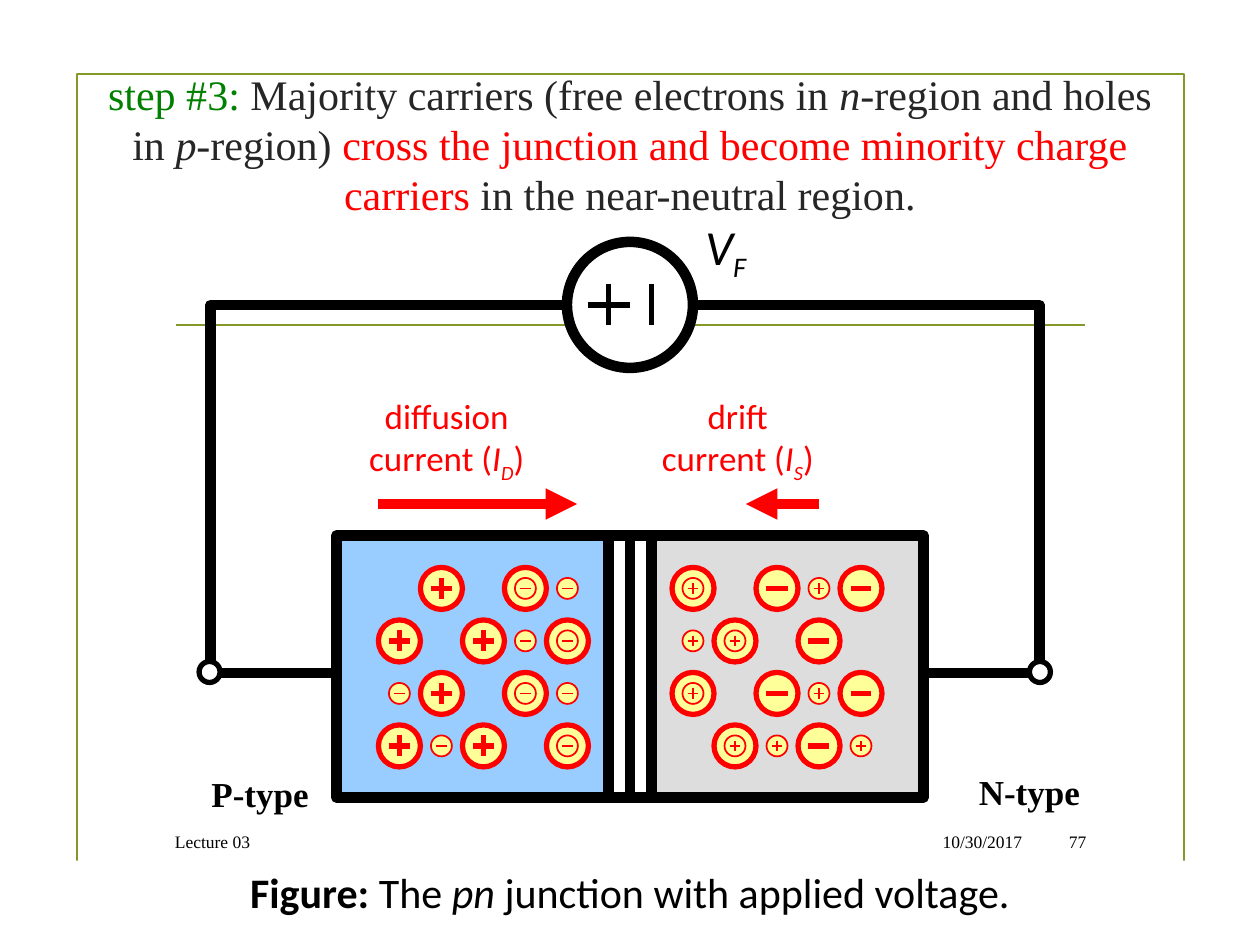
from lxml import etree
from pptx import Presentation
from pptx.dml.color import RGBColor
from pptx.enum.shapes import MSO_CONNECTOR, MSO_SHAPE
from pptx.enum.text import MSO_ANCHOR, PP_ALIGN
from pptx.oxml.ns import qn
from pptx.util import Inches, Pt

COLORS = {
    "black": "000000", "white": "FFFFFF", "red": "FF0000", "green": "008000",
    "title": "262626", "olive": "83992A", "p_side": "99CCFF",
    "n_side": "DDDDDD", "carrier": "FFFF99",
}
SERIF, SANS = "Times New Roman", "Calibri"
RECT, OVAL, LINE = MSO_SHAPE.RECTANGLE, MSO_SHAPE.OVAL, "line"


def write(paragraph, text, size=24, font=SERIF, color="black", bold=False,
          italic=False, baseline=None):
    """Append one formatted run; baseline is a percentage, negative for subscript."""
    run = paragraph.add_run()
    run.text = text
    run.font.size = Pt(size)
    run.font.name = font
    run.font.bold = bold
    run.font.italic = italic
    run.font.color.rgb = RGBColor.from_string(COLORS[color])
    if baseline:
        run.font._element.set("baseline", str(baseline * 1000))


def draw(parent, kind, left, top, width, height, color="black", weight=6,
         fill=None, arrow=False):
    """Add an outlined shape, or a line whose run is (width, height)."""
    if kind == LINE:
        item = parent.add_connector(MSO_CONNECTOR.STRAIGHT, Inches(left), Inches(top),
                                    Inches(left + width), Inches(top + height))
        etree.SubElement(item._element.spPr, qn("a:effectLst"))
    else:
        item = parent.add_shape(kind, Inches(left), Inches(top),
                                Inches(width), Inches(height))
        item.shadow.inherit = False
        if fill:
            item.fill.solid()
            item.fill.fore_color.rgb = RGBColor.from_string(COLORS[fill])
        else:
            item.fill.background()
    item.line.color.rgb = RGBColor.from_string(COLORS[color])
    item.line.width = Pt(weight)
    if arrow:
        etree.SubElement(item.line._get_or_add_ln(), qn("a:tailEnd"), type="triangle")
    return item


prs = Presentation()
prs.slide_width, prs.slide_height = Inches(10), Inches(7.5)
slide = prs.slides.add_slide(prs.slide_layouts[5])
shapes = slide.shapes

# Title
title = shapes.title
title.left, title.top = Inches(0.75), Inches(0.43)
title.width, title.height = Inches(8.5), Inches(1.42)
title.text_frame.vertical_anchor = MSO_ANCHOR.MIDDLE
title.text_frame.word_wrap = True
heading = title.text_frame.paragraphs[0]
heading.alignment = PP_ALIGN.CENTER
for text, color, italic in [
    ("step #3: ", "green", False),
    ("Majority carriers (free electrons in ", "title", False),
    ("n", "title", True),
    ("-region and holes in ", "title", False),
    ("p", "title", True),
    ("-region) ", "title", False),
    ("cross the junction and become minority charge carriers", "red", False),
    (" in the near-neutral region.", "title", False),
]:
    write(heading, text, color=color, italic=italic)

# Page frame, rule and caption
draw(shapes, RECT, 0.61, 0.59, 8.79, 6.3, "olive", 1.25)
draw(shapes, LINE, 1.4, 2.58, 7.21, 0, "olive", 1.25)
caption = draw(shapes, RECT, 0.25, 6.83, 9.5, 0.5, fill="white")
caption.line.fill.background()
figure_note = caption.text_frame.paragraphs[0]
figure_note.alignment = PP_ALIGN.CENTER
write(figure_note, "Figure:", font=SANS, bold=True)
write(figure_note, " The ", font=SANS)
write(figure_note, "pn", font=SANS, italic=True)
write(figure_note, " junction with applied voltage.", font=SANS)

# Circuit wire, terminals and diode body
draw(shapes, RECT, 1.67, 2.42, 6.58, 2.92)
for terminal_x in (1.58, 8.17):
    draw(shapes, OVAL, terminal_x, 5.25, 1 / 6, 1 / 6, weight=3, fill="white")
for left, width, fill in [(2.67, 2.33, "p_side"), (5, 2.33, "n_side"),
                          (4.83, 0.17, "white"), (5, 0.17, "white")]:
    draw(shapes, RECT, left, 4.25, width, 2.08, fill=fill)

# Voltage source
source = shapes.add_group_shape().shapes
draw(source, OVAL, 4.5, 1.92, 1, 1, fill="white")
draw(source, LINE, 4.83, 2.25, 0, 0.33, weight=3)
draw(source, LINE, 4.67, 2.42, 0.33, 0, weight=3)
draw(source, LINE, 5.17, 2.25, 0, 0.33, weight=3)

# Carriers: M majority, m minority, B minority on top of majority
P_ROWS = [".M.Bm", "M.MmB", "mM.Bm", "MmM.B"]
N_ROWS = ["B.MmM", "mB.M.", "B.MmM", ".BmMm"]
for first_x, rows, majority_positive in [(3.17, P_ROWS, True), (5.5, N_ROWS, False)]:
    for row, codes in enumerate(rows):
        for column, code in enumerate(codes):
            x, y = first_x + column / 3, 4.67 + row * 5 / 12
            for members, size, weight, positive in [
                ("MB", 1 / 3, 3, majority_positive),
                ("mB", 1 / 6, 1, not majority_positive),
            ]:
                if code not in members:
                    continue
                carrier = shapes.add_group_shape().shapes
                draw(carrier, OVAL, x - size / 2, y - size / 2, size, size,
                     "red", weight, "carrier")
                draw(carrier, LINE, x - size / 4, y, size / 2, 0, "red", weight)
                if positive:
                    draw(carrier, LINE, x, y - size / 4, 0, size / 2, "red", weight)

# Currents; the first word sits left of centre by half its right margin
draw(shapes, LINE, 3, 4, 1.58, 0, "red", arrow=True)
draw(shapes, LINE, 6.5, 4, -0.58, 0, "red", arrow=True)
for left, word, subscript, right_margin in [(2.67, "diffusion", "D", 0.5),
                                            (5.08, "drift", "S", 0.7)]:
    current = shapes.add_textbox(Inches(left), Inches(3.08),
                                 Inches(2.25), Inches(0.77)).text_frame
    current.word_wrap = True
    first, second = current.paragraphs[0], current.add_paragraph()
    first.alignment = second.alignment = PP_ALIGN.CENTER
    first._p.get_or_add_pPr().set("marR", str(Inches(right_margin)))
    red = dict(size=20, font=SANS, color="red")
    write(first, word, **red)
    write(second, "current (", **red)
    write(second, "I", italic=True, **red)
    write(second, subscript, italic=True, baseline=-25, **red)
    write(second, ")", **red)

voltage = shapes.add_textbox(Inches(5.5), Inches(1.67), Inches(2.58), Inches(0.57))
voltage.text_frame.word_wrap = True
symbol = voltage.text_frame.paragraphs[0]
write(symbol, "V", size=28, font=SANS, italic=True)
write(symbol, "F", size=28, font=SANS, italic=True, baseline=-25)

# Region labels and footer
for text, left, top, width, height, size, bold, align in [
    ("P-type", 1.58, 6.08, 0.97, 0.44, 20, True, PP_ALIGN.LEFT),
    ("N-type", 7.67, 6.06, 1.04, 0.44, 20, True, PP_ALIGN.LEFT),
    ("Lecture 03", 1.29, 6.52, 5.58, 0.31, 10, False, PP_ALIGN.LEFT),
    ("10/30/2017", 6.95, 6.52, 1.26, 0.31, 10, False, PP_ALIGN.RIGHT),
    ("77", 8.29, 6.52, 0.43, 0.31, 10, False, PP_ALIGN.RIGHT),
]:
    label = shapes.add_textbox(Inches(left), Inches(top),
                               Inches(width), Inches(height)).text_frame
    label.word_wrap = not bold
    label.vertical_anchor = MSO_ANCHOR.MIDDLE
    label.paragraphs[0].alignment = align
    write(label.paragraphs[0], text, size=size, bold=bold)

prs.save("out.pptx")
